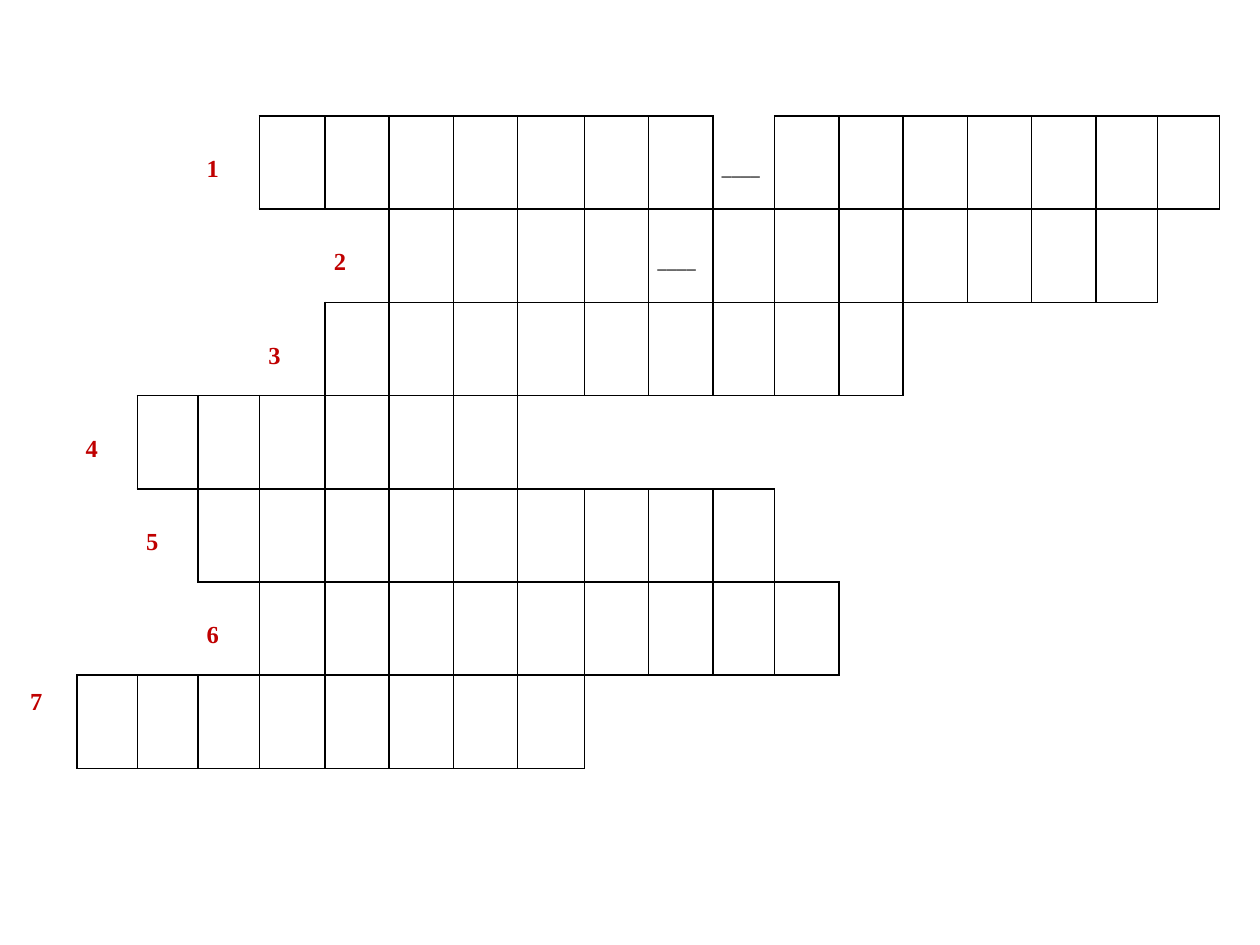
from dataclasses import dataclass

from lxml.etree import SubElement
from pptx import Presentation
from pptx.dml.color import RGBColor
from pptx.enum.text import MSO_ANCHOR, PP_ALIGN
from pptx.oxml.ns import qn
from pptx.table import Table, _Cell
from pptx.util import Inches, Pt


@dataclass(frozen=True)
class Style:
    """Type face, size, colour and weight of a label."""
    face: str
    size: float
    color: str
    bold: bool


@dataclass(frozen=True)
class Theme:
    number: Style = Style("Times New Roman", 14, "C00000", True)
    dash: Style = Style("Calibri", 11, "000000", False)
    line: str = "000000"
    key: str = "FFFFFF"


@dataclass(frozen=True)
class Word:
    """One answer: its first column, its length, and where it is broken."""
    start: int
    size: int
    dash: int | None = None
    gap: bool = False  # the dash stands outside the boxes

    def holds(self, col: int) -> bool:
        inside = self.start <= col < self.start + self.size
        return inside and not (self.gap and col == self.dash)


THEME = Theme()
WIDTHS = (0.44, 0.48, 0.48, 0.49, 0.52, 0.51, 0.51, 0.51, 0.53, 0.51,
          0.51, 0.49, 0.51, 0.51, 0.51, 0.51, 0.51, 0.49, 0.49)
HEIGHT = 0.74
KEY_COL = 7
WORDS = (
    Word(4, 15, dash=11, gap=True),
    Word(6, 12, dash=10),
    Word(5, 9),
    Word(2, 6),
    Word(3, 9),
    Word(4, 9),
    Word(1, 8),
)
# Border tags with the step to the neighbour sharing that edge
SIDES = (("a:lnL", 0, -1), ("a:lnR", 0, 1), ("a:lnT", -1, 0), ("a:lnB", 1, 0))


def boxed(row: int, col: int) -> bool:
    return 0 <= row < len(WORDS) and WORDS[row].holds(col)


def border(cell: _Cell, row: int, col: int) -> None:
    """Rule every edge that touches a letter box; clear the others."""
    props = cell._tc.get_or_add_tcPr()
    for tag, down, right in SIDES:
        line = SubElement(props, qn(tag), w=str(Pt(1)))
        if boxed(row, col) or boxed(row + down, col + right):
            fill = SubElement(line, qn("a:solidFill"))
            SubElement(fill, qn("a:srgbClr"), val=THEME.line)
        else:
            SubElement(line, qn("a:noFill"))


def paint(cell: _Cell, row: int, col: int) -> None:
    if col == KEY_COL and boxed(row, col):
        cell.fill.solid()
        cell.fill.fore_color.rgb = RGBColor.from_string(THEME.key)
    else:
        cell.fill.background()


def label(cell: _Cell, text: str, style: Style, anchor: MSO_ANCHOR) -> None:
    cell.vertical_anchor = anchor
    cell.text = text
    para = cell.text_frame.paragraphs[0]
    para.alignment = PP_ALIGN.JUSTIFY
    para.line_spacing = 1.5
    font = para.font
    font.name, font.size, font.bold = style.face, Pt(style.size), style.bold
    font.color.rgb = RGBColor.from_string(style.color)


def fill_row(table: Table, row: int, word: Word) -> None:
    for col in range(len(WIDTHS)):
        cell = table.cell(row, col)
        cell.margin_left = cell.margin_right = Inches(0.07)
        cell.margin_top = cell.margin_bottom = 0
        border(cell, row, col)
        paint(cell, row, col)
    # The number stands just before the word; the last one sits at the top
    last = row == len(WORDS) - 1
    anchor = MSO_ANCHOR.TOP if last else MSO_ANCHOR.MIDDLE
    label(table.cell(row, word.start - 1), str(row + 1), THEME.number, anchor)
    if word.dash is not None:
        label(table.cell(row, word.dash), "____", THEME.dash,
              MSO_ANCHOR.MIDDLE)


def main() -> None:
    deck = Presentation()
    deck.slide_width, deck.slide_height = Inches(10), Inches(7.5)
    slide = deck.slides.add_slide(deck.slide_layouts[6])

    # Crossword grid
    table = slide.shapes.add_table(
        len(WORDS), len(WIDTHS), Inches(0.17), Inches(0.92),
        Inches(sum(WIDTHS)), Inches(HEIGHT * len(WORDS))).table
    table.first_row = table.horz_banding = False
    for col, width in zip(table.columns, WIDTHS):
        col.width = Inches(width)
    for line in table.rows:
        line.height = Inches(HEIGHT)

    # Words
    for row, word in enumerate(WORDS):
        fill_row(table, row, word)

    deck.save("out.pptx")


if __name__ == "__main__":
    main()
